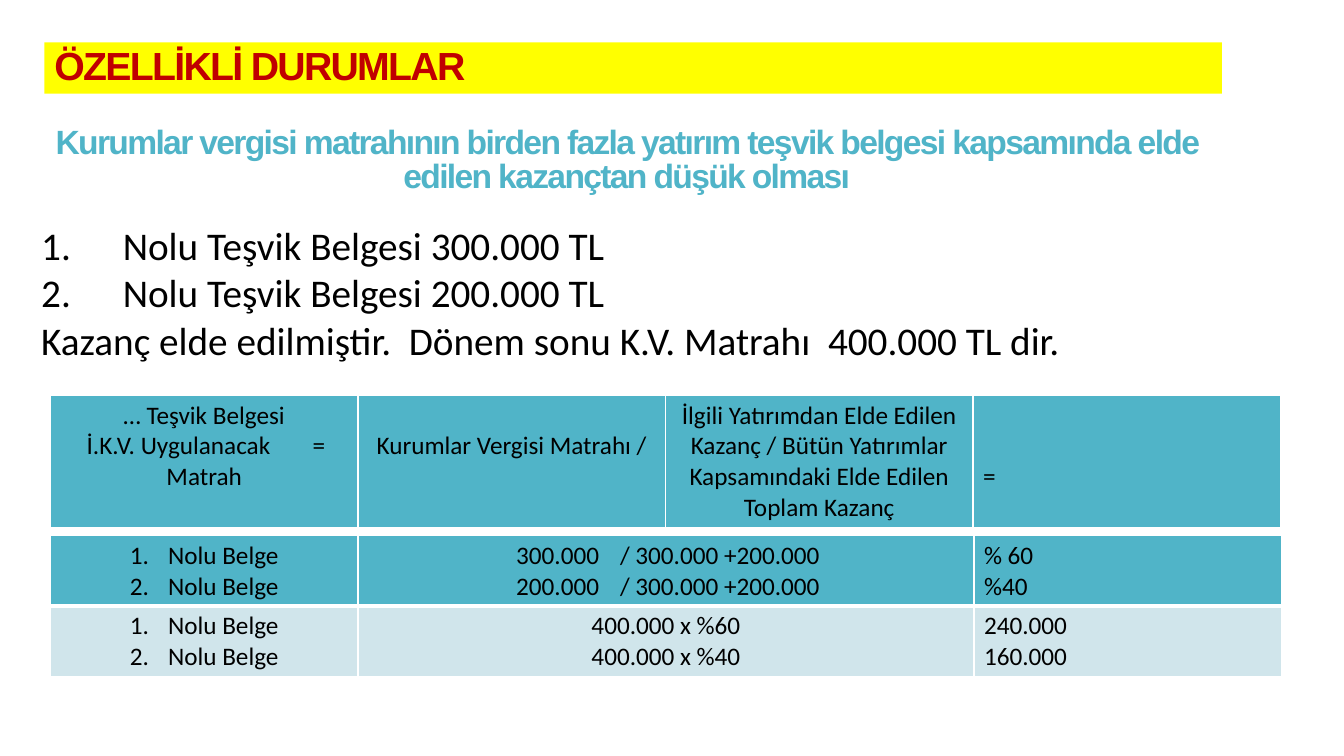
from dataclasses import dataclass

from lxml.etree import SubElement
from pptx import Presentation
from pptx.dml.color import RGBColor
from pptx.enum.shapes import MSO_SHAPE
from pptx.enum.text import MSO_ANCHOR, MSO_AUTO_SIZE, PP_ALIGN
from pptx.oxml.ns import qn
from pptx.util import Inches, Pt


@dataclass(frozen=True)
class Theme:
    teal: str = "50B4C8"
    pale: str = "D0E5EB"
    yellow: str = "FFFF00"
    red: str = "C00000"
    black: str = "000000"
    white: str = "FFFFFF"
    heading_font: str = "Arial"
    body_font: str = "Calibri"
    banner_size: int = 28
    heading_size: int = 24
    body_size: int = 28
    table_size: int = 18


THEME = Theme()
LINE_HEIGHT = 0.305  # one line of table text, in inches
CENTER, LEFT = PP_ALIGN.CENTER, PP_ALIGN.LEFT


@dataclass(frozen=True)
class Entry:
    """Content of one table cell."""
    lines: tuple
    align: int = CENTER
    skipped_lines: int = 0  # room left free above the text
    numbered: bool = False
    tab_line: tuple = ()  # indent and tab stop for lines that hold a tab


def style_paragraph(paragraph, size, color, font, align=LEFT, bold=False):
    paragraph.alignment = align
    for run in paragraph.runs:
        run.font.name = font
        run.font.size = Pt(size)
        run.font.bold = bold
        run.font.color.rgb = RGBColor.from_string(color)


def number_paragraph(paragraph, indent):
    properties = paragraph._p.get_or_add_pPr()
    properties.set("marL", str(Inches(indent)))
    properties.set("indent", str(-Inches(indent)))
    SubElement(properties, qn("a:buFont"), typeface="+mj-lt")
    SubElement(properties, qn("a:buAutoNum"), type="arabicPeriod")


def add_tab_stop(paragraph, indent, stop):
    properties = paragraph._p.get_or_add_pPr()
    properties.set("marL", "0")
    properties.set("indent", str(Inches(indent)))
    stops = SubElement(properties, qn("a:tabLst"))
    SubElement(stops, qn("a:tab"), pos=str(Inches(stop)), algn="l")


def write_heading(shape, text, size, color, align):
    frame = shape.text_frame
    frame.word_wrap = True
    frame.vertical_anchor = MSO_ANCHOR.MIDDLE
    frame.text = text
    paragraph = frame.paragraphs[0]
    paragraph.line_spacing = 0.85
    style_paragraph(paragraph, size, color, THEME.heading_font, align, bold=True)
    for run in paragraph.runs:
        run.font._element.set("spc", "-120")


def add_banner(slide, text):
    banner = slide.shapes.add_shape(
        MSO_SHAPE.RECTANGLE, Inches(0.44), Inches(0.42), Inches(11.68), Inches(0.51))
    banner.shadow.inherit = False
    banner.fill.solid()
    banner.fill.fore_color.rgb = RGBColor.from_string(THEME.yellow)
    banner.line.fill.background()
    write_heading(banner, text, THEME.banner_size, THEME.red, LEFT)


def add_subtitle(slide, text):
    subtitle = slide.shapes.add_textbox(
        Inches(0.31), Inches(1.18), Inches(11.81), Inches(0.84))
    write_heading(subtitle, text, THEME.heading_size, THEME.teal, CENTER)


def add_example(slide, certificates, conclusion):
    example = slide.shapes.add_textbox(
        Inches(0.31), Inches(2.15), Inches(11.49), Inches(1.51))
    frame = example.text_frame
    frame.word_wrap = True
    frame.auto_size = MSO_AUTO_SIZE.SHAPE_TO_FIT_TEXT
    frame.text = "\n".join([*certificates, conclusion])
    for paragraph in frame.paragraphs:
        style_paragraph(paragraph, THEME.body_size, THEME.black, THEME.body_font)
    for paragraph in frame.paragraphs[:len(certificates)]:
        number_paragraph(paragraph, 0.81)


def set_borders(cell, bottom_width):
    properties = cell._tc.get_or_add_tcPr()
    widths = {"a:lnL": 1, "a:lnR": 1, "a:lnT": 1, "a:lnB": bottom_width}
    for position, (side, width) in enumerate(widths.items()):
        border = SubElement(properties, qn(side), w=str(Pt(width)))
        fill = SubElement(border, qn("a:solidFill"))
        SubElement(fill, qn("a:srgbClr"), val=THEME.white)
        properties.insert(position, border)


def fill_cell(cell, entry, color, bottom_width):
    cell.fill.solid()
    cell.fill.fore_color.rgb = RGBColor.from_string(color)
    set_borders(cell, bottom_width)
    cell.margin_top = Inches(0.05 + entry.skipped_lines * LINE_HEIGHT)
    cell.text_frame.text = "\n".join(entry.lines)
    for paragraph in cell.text_frame.paragraphs:
        tabbed = "\t" in paragraph.text
        style_paragraph(paragraph, THEME.table_size, THEME.black, THEME.body_font,
                        LEFT if tabbed else entry.align)
        if entry.numbered:
            number_paragraph(paragraph, 0.38)
        if tabbed:
            add_tab_stop(paragraph, *entry.tab_line)


def add_grid(slide, top, widths, row_height, rows, row_styles):
    frame = slide.shapes.add_table(
        len(rows), len(widths), Inches(0.5), Inches(top),
        Inches(sum(widths)), Inches(row_height * len(rows)))
    grid = frame.table
    grid.first_row = grid.horz_banding = False
    for column, width in zip(grid.columns, widths):
        column.width = Inches(width)
    for row, entries, (color, bottom_width) in zip(grid.rows, rows, row_styles):
        row.height = Inches(row_height)
        for cell, entry in zip(row.cells, entries):
            fill_cell(cell, entry, color, bottom_width)


def main():
    presentation = Presentation()
    presentation.slide_width = Inches(13.33)
    presentation.slide_height = Inches(7.5)
    slide = presentation.slides.add_slide(presentation.slide_layouts[6])

    # Headings and worked example
    add_subtitle(slide, "Kurumlar vergisi matrahının birden fazla yatırım teşvik belgesi "
                        "kapsamında elde edilen kazançtan düşük olması")
    add_example(
        slide,
        ["Nolu Teşvik Belgesi 300.000 TL", "Nolu Teşvik Belgesi 200.000 TL"],
        "Kazanç elde edilmiştir.  Dönem sonu K.V. Matrahı  400.000 TL dir.")

    # Formula
    formula = [
        Entry(("… Teşvik Belgesi", "İ.K.V. Uygulanacak\t=", "Matrah"),
              tab_line=(0.26, 2.48)),
        Entry(("Kurumlar Vergisi Matrahı /",), skipped_lines=1),
        Entry(("İlgili Yatırımdan Elde Edilen Kazanç / Bütün Yatırımlar "
               "Kapsamındaki Elde Edilen Toplam Kazanç",)),
        Entry(("=",), LEFT, skipped_lines=2),
    ]
    add_grid(slide, 3.92, [3.05] * 4, 1.33, [formula], [(THEME.teal, 3)])

    # Shares and resulting amounts
    certificates = Entry(("Nolu Belge", "Nolu Belge"), numbered=True)
    shares = [
        certificates,
        Entry(("300.000\t/ 300.000 +200.000", "200.000\t/ 300.000 +200.000"),
              tab_line=(1.47, 2.47)),
        Entry(("% 60", "%40"), LEFT),
    ]
    amounts = [
        certificates,
        Entry(("400.000 x %60", "400.000 x %40")),
        Entry(("240.000", "160.000"), LEFT),
    ]
    add_grid(slide, 5.31, [3.05, 6.11, 3.05], 0.7, [shares, amounts],
             [(THEME.teal, 3), (THEME.pale, 1)])

    # Banner
    add_banner(slide, "ÖZELLİKLİ DURUMLAR")
    presentation.save("out.pptx")


if __name__ == "__main__":
    main()
